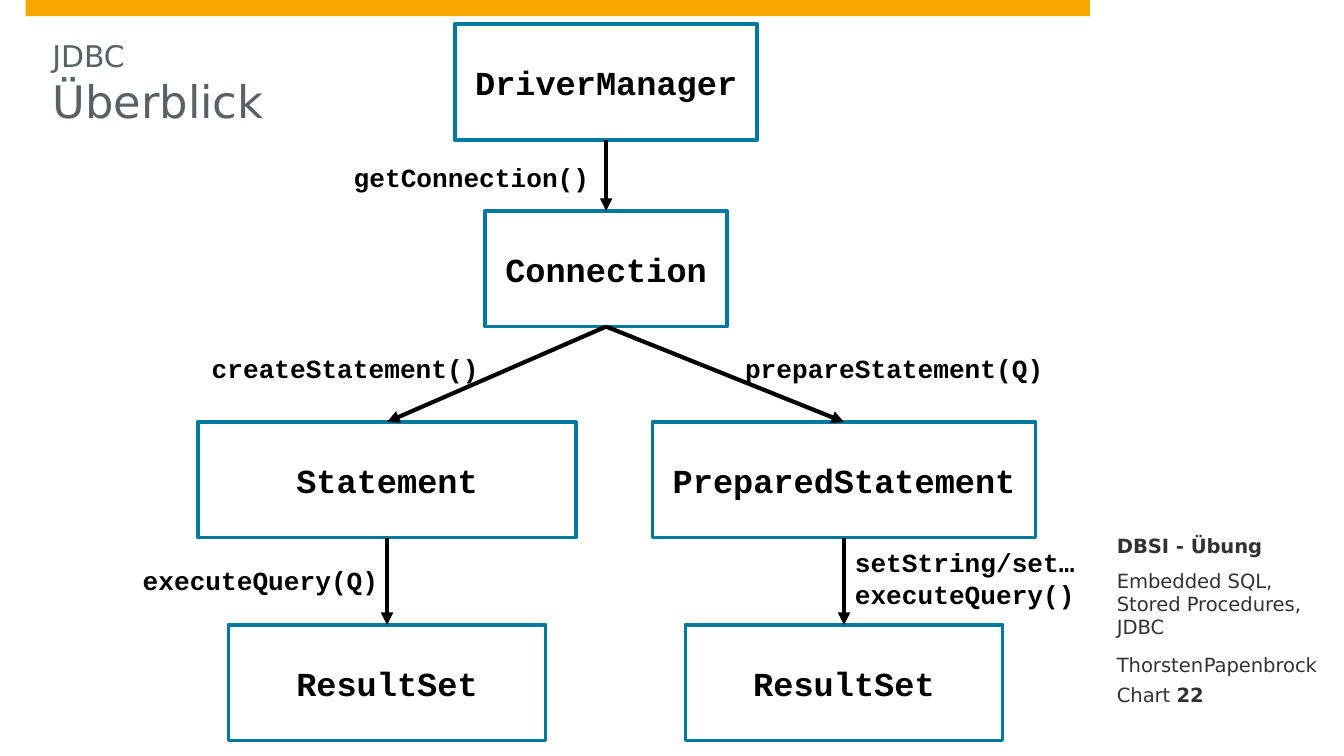
from pptx import Presentation
from pptx.dml.color import RGBColor
from pptx.enum.shapes import MSO_CONNECTOR as Link, MSO_SHAPE as Shape
from pptx.enum.text import MSO_ANCHOR as Anchor, MSO_AUTO_SIZE as Fit, PP_ALIGN as Align
from pptx.oxml.ns import qn
from pptx.util import Inches, Pt
from lxml.etree import SubElement

MONO, SANS = "Courier New", "DejaVu Sans"
BLACK, WHITE, GREY, TEXT = "000000", "FFFFFF", "5A6166", "323232"
BLUE, AMBER = "007A9E", "F6A800"
BOX_H = 0.86
LEFT, MID, RIGHT = 2.88, 4.51, 6.28
ROWS = [0.18, 1.57, 3.14, 4.65]


def color(code):
    return RGBColor.from_string(code)


def style(run, size, face, code, bold=False):
    font = run.font
    font.size, font.name, font.bold = Pt(size), face, bold
    font.color.rgb = color(code)


def inset(frame, left, top, right, bottom):
    frame.margin_left, frame.margin_top = Inches(left), Inches(top)
    frame.margin_right, frame.margin_bottom = Inches(right), Inches(bottom)


def add_rect(slide, x, y, w, h, fill):
    rect = slide.shapes.add_shape(Shape.RECTANGLE, Inches(x), Inches(y), Inches(w), Inches(h))
    rect.shadow.inherit = False
    rect.fill.solid()
    rect.fill.fore_color.rgb = color(fill)
    return rect


def add_bar(slide):
    add_rect(slide, 0.19, 0, 7.92, 0.12, AMBER).line.fill.background()


def add_title(slide):
    title = slide.shapes.title
    title.left, title.top = Inches(0.39), Inches(0.12)
    title.width, title.height = Inches(7.72), Inches(1.01)
    frame = title.text_frame
    frame.text = "JDBC\nÜberblick"
    frame.word_wrap, frame.auto_size = True, Fit.NONE
    frame.vertical_anchor = Anchor.TOP
    inset(frame, 0, 0.16, 0, 0)
    for para, size in zip(frame.paragraphs, (16, 24)):
        para.alignment = Align.LEFT
        style(para.runs[0], size, SANS, GREY)


def add_note(slide, y, h, anchor, *parts):
    box = slide.shapes.add_textbox(Inches(8.19), Inches(y), Inches(1.69), Inches(h))
    frame = box.text_frame
    frame.word_wrap, frame.vertical_anchor = True, anchor
    inset(frame, 0.12, 0, 0, 0)
    for text, size, bold in parts:
        run = frame.paragraphs[0].add_run()
        run.text = text
        style(run, size, SANS, TEXT, bold)


def add_class(slide, name, mid, y, w):
    rect = add_rect(slide, mid - w / 2, y, w, BOX_H, WHITE)
    rect.line.color.rgb = color(BLUE)
    rect.line.width = Pt(2)
    frame = rect.text_frame
    frame.text = name
    frame.word_wrap, frame.vertical_anchor = True, Anchor.MIDDLE
    para = frame.paragraphs[0]
    para.alignment = Align.CENTER
    style(para.runs[0], 18, MONO, BLACK, True)
    return rect


def add_arrow(slide, start, end):
    arrow = slide.shapes.add_connector(Link.STRAIGHT, 0, 0, 0, 0)
    arrow.begin_connect(start, 2)
    arrow.end_connect(end, 0)
    arrow.line.color.rgb = color(BLACK)
    arrow.line.width = Pt(2.25)
    props = arrow._element.spPr
    SubElement(props.find(qn("a:ln")), qn("a:tailEnd"), type="triangle")
    SubElement(props, qn("a:effectLst"))


def add_call(slide, text, x, y, w, h=0.34):
    box = slide.shapes.add_textbox(Inches(x), Inches(y), Inches(w), Inches(h))
    frame = box.text_frame
    frame.text = text
    frame.word_wrap, frame.auto_size = False, Fit.SHAPE_TO_FIT_TEXT
    for para in frame.paragraphs:
        para.alignment = Align.CENTER
        style(para.runs[0], 14, MONO, BLACK, True)


def main():
    deck = Presentation()
    deck.slide_width = Inches(10)
    deck.slide_height = deck.slide_width * 9 // 16
    slide = deck.slides.add_slide(deck.slide_layouts[5])

    add_bar(slide)
    add_title(slide)
    add_note(slide, 5.06, 0.2, Anchor.BOTTOM, ("Chart ", 10.5, False), ("22", 10.5, True))
    add_note(slide, 4.23, 0.4, Anchor.TOP, ("Embedded SQL, Stored Procedures, JDBC", 10.5, False))
    add_note(slide, 3.58, 0.57, Anchor.BOTTOM, ("DBSI - Übung", 10.5, True))
    add_note(slide, 4.86, 0.2, Anchor.TOP,
             ("Thorsten", 10.5, False), (" ", 1, False), ("Papenbrock", 10.5, False))

    driver = add_class(slide, "DriverManager", MID, ROWS[0], 2.25)
    conn = add_class(slide, "Connection", MID, ROWS[1], 1.8)
    plain = add_class(slide, "Statement", LEFT, ROWS[2], 2.81)
    prep = add_class(slide, "PreparedStatement", RIGHT, ROWS[2], 2.85)
    rows_l, rows_r = [add_class(slide, "ResultSet", mid, ROWS[3], 2.36) for mid in (LEFT, RIGHT)]

    links = [(driver, conn), (conn, plain), (conn, prep), (plain, rows_l), (prep, rows_r)]
    for start, end in links:
        add_arrow(slide, start, end)

    add_call(slide, "getConnection()", 2.53, 1.15, 1.96)
    add_call(slide, "createStatement()", 1.47, 2.57, 2.2)
    add_call(slide, "executeQuery(Q)", 0.96, 4.15, 1.96)
    add_call(slide, "prepareStatement(Q)", 5.44, 2.57, 2.43)
    add_call(slide, "setString/set…\nexecuteQuery()", 6.26, 4.02, 1.84, 0.57)

    deck.save("out.pptx")


if __name__ == "__main__":
    main()
